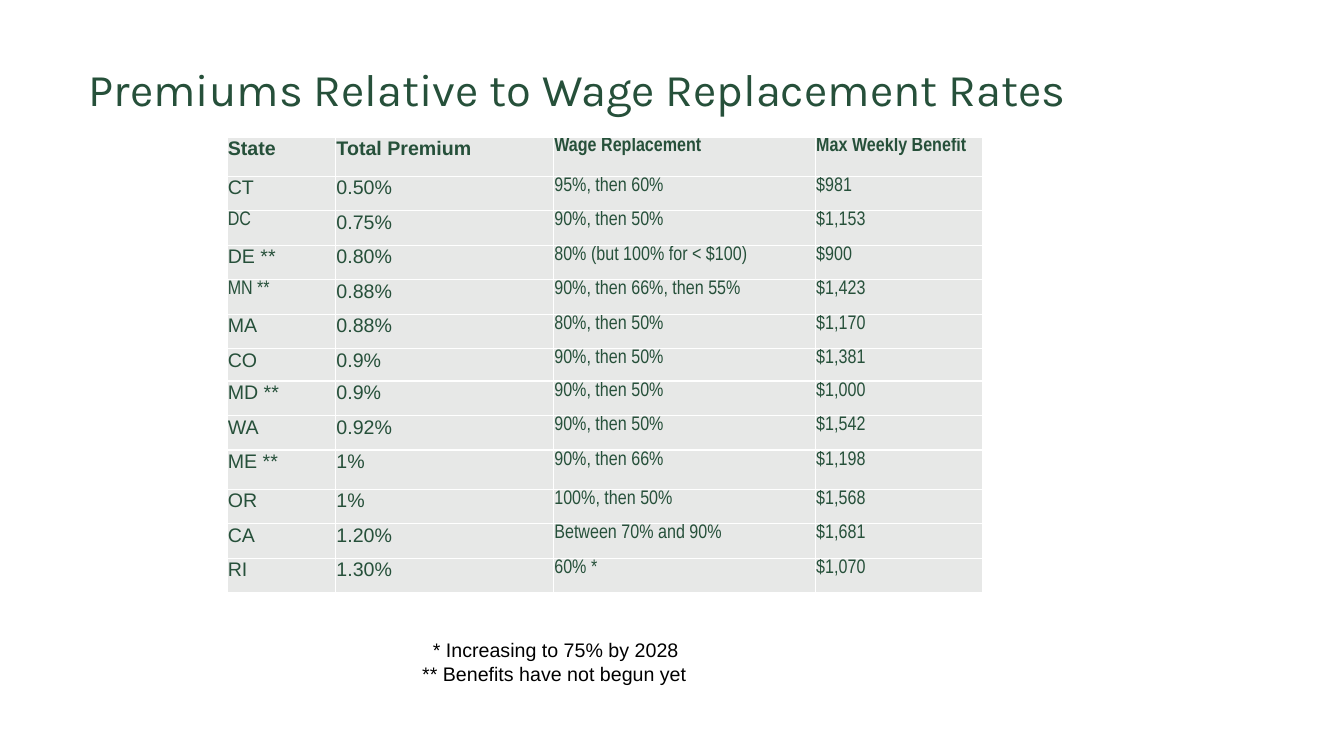
import pptx
import pptx.util
import pptx.dml.color
import pptx.enum.text
import pptx.oxml
import pptx.oxml.ns
from pptx.util import Cm

GREEN, GREY, WHITE, BLACK = "26503A", "E7E8E7", "FFFFFF", "000000"
HEADER = ("State", "Total Premium", "Wage Replacement", "Max Weekly Benefit")
STATES = [
    ("CT", "0.50%", "95%, then 60%", "$981"),
    ("DC", "0.75%", "90%, then 50%", "$1,153"),
    ("DE **", "0.80%", "80% (but 100% for < $100)", "$900"),
    ("MN **", "0.88%", "90%, then 66%, then 55%", "$1,423"),
    ("MA", "0.88%", "80%, then 50%", "$1,170"),
    ("CO", "0.9%", "90%, then 50%", "$1,381"),
    ("MD **", "0.9%", "90%, then 50%", "$1,000"),
    ("WA", "0.92%", "90%, then 50%", "$1,542"),
    ("ME **", "1%", "90%, then 66%", "$1,198"),
    ("OR", "1%", "100%, then 50%", "$1,568"),
    ("CA", "1.20%", "Between 70% and 90%", "$1,681"),
    ("RI", "1.30%", "60% *", "$1,070"),
]
COLUMN_WIDTHS = (2.74, 5.49, 6.6, 4.22)
ROW_HEIGHT = 0.87
SPECIAL_HEIGHTS = {0: 0.99, 6: 0.81, 9: 0.99}
NARROW_STATES = ("DC", "MN **")


def color(hex_string):
    return pptx.dml.color.RGBColor.from_string(hex_string)


def add_run(p, text, size, font, hex_color, bold=False):
    r = p.add_run()
    r.text = text
    r.font.size = pptx.util.Pt(size)
    r.font.name = font
    r.font.bold = bold
    r.font.color.rgb = color(hex_color)


def set_borders(cell, hex_color):
    tcPr = cell._tc.get_or_add_tcPr()
    # Border lines come before the fill in the cell properties
    for i, side in enumerate(("lnL", "lnR", "lnT", "lnB")):
        tcPr.insert(i, pptx.oxml.parse_xml(
            f'<a:{side} {pptx.oxml.ns.nsdecls("a")} w="12700"><a:solidFill>'
            f'<a:srgbClr val="{hex_color}"/></a:solidFill></a:{side}>'))


def fill_cell(cell, text, font, bold):
    cell.margin_left = cell.margin_right = cell.margin_top = Cm(0.02)
    cell.margin_bottom = 0
    cell.fill.solid()
    cell.fill.fore_color.rgb = color(GREY)
    set_borders(cell, WHITE)
    add_run(cell.text_frame.paragraphs[0], text, 14, font, GREEN, bold)


def set_title(s, text):
    sp = s.shapes.title
    sp.left, sp.top, sp.width, sp.height = Cm(1.98), Cm(0.89), Cm(29.21), Cm(2.84)
    tf = sp.text_frame
    tf.auto_size = pptx.enum.text.MSO_AUTO_SIZE.NONE
    tf.vertical_anchor = pptx.enum.text.MSO_ANCHOR.MIDDLE
    p = tf.paragraphs[0]
    p.alignment = pptx.enum.text.PP_ALIGN.LEFT
    p.line_spacing = 0.9
    add_run(p, text, 32.4, "Karla", GREEN)


def add_premium_table(s):
    rows = [HEADER] + STATES
    heights = [SPECIAL_HEIGHTS.get(i, ROW_HEIGHT) for i in range(len(rows))]
    table = s.shapes.add_table(len(rows), len(HEADER), Cm(5.72), Cm(3.45),
                               Cm(sum(COLUMN_WIDTHS)), Cm(sum(heights))).table
    for column, width in zip(table.columns, COLUMN_WIDTHS):
        column.width = Cm(width)
    for i, row in enumerate(rows):
        table.rows[i].height = Cm(heights[i])
        for j, text in enumerate(row):
            narrow = j >= 2 or text in NARROW_STATES
            fill_cell(table.cell(i, j), text,
                      "Arial Narrow" if narrow else "Arial", bold=i == 0)


def add_footnotes(s, notes):
    tf = s.shapes.add_textbox(Cm(10.39), Cm(15.95), Cm(11.07), Cm(1.45)).text_frame
    tf.word_wrap = True
    for i, (text, indent) in enumerate(notes):
        p = tf.add_paragraph() if i else tf.paragraphs[0]
        p._p.get_or_add_pPr().set("marL", str(Cm(indent)))
        add_run(p, text, 14, "Arial", BLACK)


def main():
    prs = pptx.Presentation()
    prs.slide_width, prs.slide_height = Cm(33.87), Cm(19.05)
    s = prs.slides.add_slide(prs.slide_layouts[5])

    # Title
    set_title(s, "Premiums Relative to Wage Replacement Rates")

    # State comparison
    add_premium_table(s)

    # Footnotes, the first one slightly indented
    add_footnotes(s, [("* Increasing to 75% by 2028", 0.27),
                      ("** Benefits have not begun yet", 0)])

    prs.save("out.pptx")


if __name__ == "__main__":
    main()
